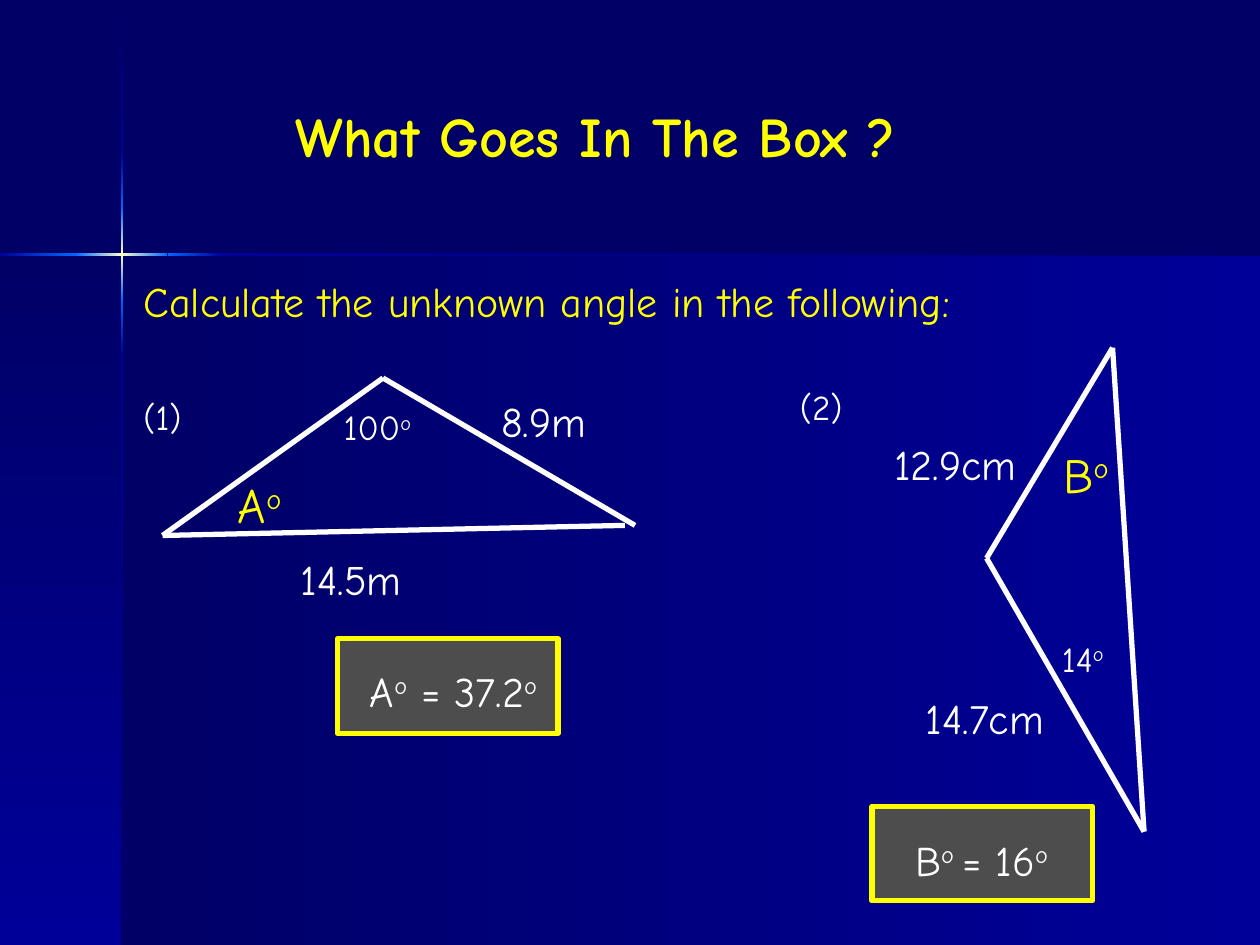
from copy import deepcopy
from itertools import pairwise

from lxml.etree import SubElement
from pptx import Presentation
from pptx.dml.color import RGBColor
from pptx.enum.shapes import MSO_CONNECTOR, MSO_SHAPE
from pptx.enum.text import MSO_ANCHOR, MSO_AUTO_SIZE, PP_ALIGN
from pptx.oxml.ns import qn
from pptx.util import Inches, Pt

NAVY, BLUE, SKY, CREAM = "000066", "000099", "0066FF", "FFFFCC"
WHITE, YELLOW, GREY = "FFFFFF", "FFFF00", "4D4D4D"


def tint(code):
    return RGBColor.from_string(code)


def write(frame, text, size=24, color=WHITE, bold=False, align=PP_ALIGN.LEFT):
    para = frame.paragraphs[0]
    para.alignment = align
    for i, part in enumerate(text.split("^")):
        if not part:
            continue
        run = para.add_run()
        run.text = part
        font = run.font
        font.name, font.size, font.bold = "Comic Neue", Pt(size), bold
        font.color.rgb = tint(color)
        if i % 2:
            run._r.get_or_add_rPr().set("baseline", "30000")


class Board:
    """Draws styled elements on one slide."""

    def __init__(self, slide, width=3):
        self.slide, self.shapes, self.width = slide, slide.shapes, Pt(width)
        fill = slide.background.fill
        fill.solid()
        fill.fore_color.rgb = tint(NAVY)

    def rect(self, *area):
        shape = self.shapes.add_shape(MSO_SHAPE.RECTANGLE, *map(Inches, area))
        shape.shadow.inherit = False
        return shape

    def blend(self, area, colors, angle=0):
        shape = self.rect(*area)
        shape.line.fill.background()
        fill = shape.fill
        fill.gradient()
        fill.gradient_angle = -angle % 360
        stops = shape.element.spPr.find(qn("a:gradFill")).find(qn("a:gsLst"))
        for _ in colors[2:]:
            stops.append(deepcopy(stops[0]))
        for i, (stop, color) in enumerate(zip(fill.gradient_stops, colors)):
            stop.color.rgb = tint(color)
            stop.position = i / (len(colors) - 1)

    def box(self, *area):
        shape = self.rect(*area)
        shape.fill.solid()
        shape.fill.fore_color.rgb = tint(GREY)
        shape.line.color.rgb = tint(YELLOW)
        shape.line.width = self.width

    def line(self, start, end):
        link = self.shapes.add_connector(
            MSO_CONNECTOR.STRAIGHT, *map(Inches, (*start, *end)))
        link.line.color.rgb = tint(WHITE)
        link.line.width = self.width
        SubElement(link.element.spPr, qn("a:effectLst"))

    def label(self, text, *area, middle=False, **style):
        frame = self.shapes.add_textbox(*map(Inches, area)).text_frame
        frame.word_wrap = True
        if middle:
            frame.vertical_anchor = MSO_ANCHOR.MIDDLE
        else:
            frame.auto_size = MSO_AUTO_SIZE.SHAPE_TO_FIT_TEXT
        write(frame, text, **style)


def backdrop(board):
    board.blend((0.97, 2.02, 9.03, 5.48), (NAVY, BLUE))
    board.blend((0, 2.02, 0.97, 5.48), (NAVY, BLUE), 90)
    glow = (SKY, CREAM, SKY)
    down = (0.01, 1.21, 1.65, 2.38, 2.82, 7.5)
    fades = ((NAVY, BLUE), (BLUE, SKY), glow, (SKY, BLUE), (BLUE, NAVY))
    for (top, end), fade in zip(pairwise(down), fades):
        board.blend((0.96, top, 0.02, end - top), fade, 90)
    for (left, end), fade in zip(pairwise((0, 0.6, 1.33, 1.77, 10)), fades[1:]):
        board.blend((left, 2.01, end - left, 0.02), fade)


def main():
    deck = Presentation()
    deck.slide_width, deck.slide_height = Inches(10), Inches(7.5)
    board = Board(deck.slides.add_slide(deck.slide_layouts[6]))
    backdrop(board)

    board.label("What Goes In The Box ?", 2.25, 0.61, 5.81, 0.92,
                middle=True, size=32, color=YELLOW, bold=True)
    board.label("Calculate the unknown angle in the following:",
                1.04, 2.14, 7.37, 0.51, color=YELLOW)

    wide = ((5.04, 4.17), (3.04, 3), (1.29, 4.25), (4.96, 4.17))
    tall = ((8.83, 2.76), (7.83, 4.43), (9.08, 6.6), (8.83, 2.76))
    for points in (wide, tall):
        for start, end in pairwise(points):
            board.line(start, end)

    for text, left, top, width in (
            ("14.5m", 2.29, 4.34, 1.33), ("8.9m", 3.88, 3.09, 1.09),
            ("14.7cm", 7.25, 5.45, 1.33), ("12.9cm", 7, 3.43, 1.33)):
        board.label(text, left, top, width, 0.5)
    for text, left, top, width in (
            ("(1)", 1.04, 3.09, 0.75), ("100^o^", 2.63, 3.17, 1),
            ("(2)", 6.25, 3.01, 0.75), ("14^o^", 8.33, 5.01, 0.75)):
        board.label(text, left, top, width, 0.5, size=20)
    for text, left, top, width in (
            ("A^o^", 1.79, 3.72, 0.81), ("B^o^", 8.34, 3.48, 0.67)):
        board.label(text, left, top, width, 0.57, size=28, color=YELLOW)

    for left, top in ((2.68, 5.07), (6.92, 6.4)):
        board.box(left, top, 1.75, 0.75)
    for text, left, top, width in (
            ("A^o^ = 37.2^o^", 2.57, 5.23, 2.06),
            ("B^o ^= 16^o^", 7, 6.57, 1.58)):
        board.label(text, left, top, width, 0.51, align=PP_ALIGN.CENTER)

    deck.save("out.pptx")


if __name__ == "__main__":
    main()
